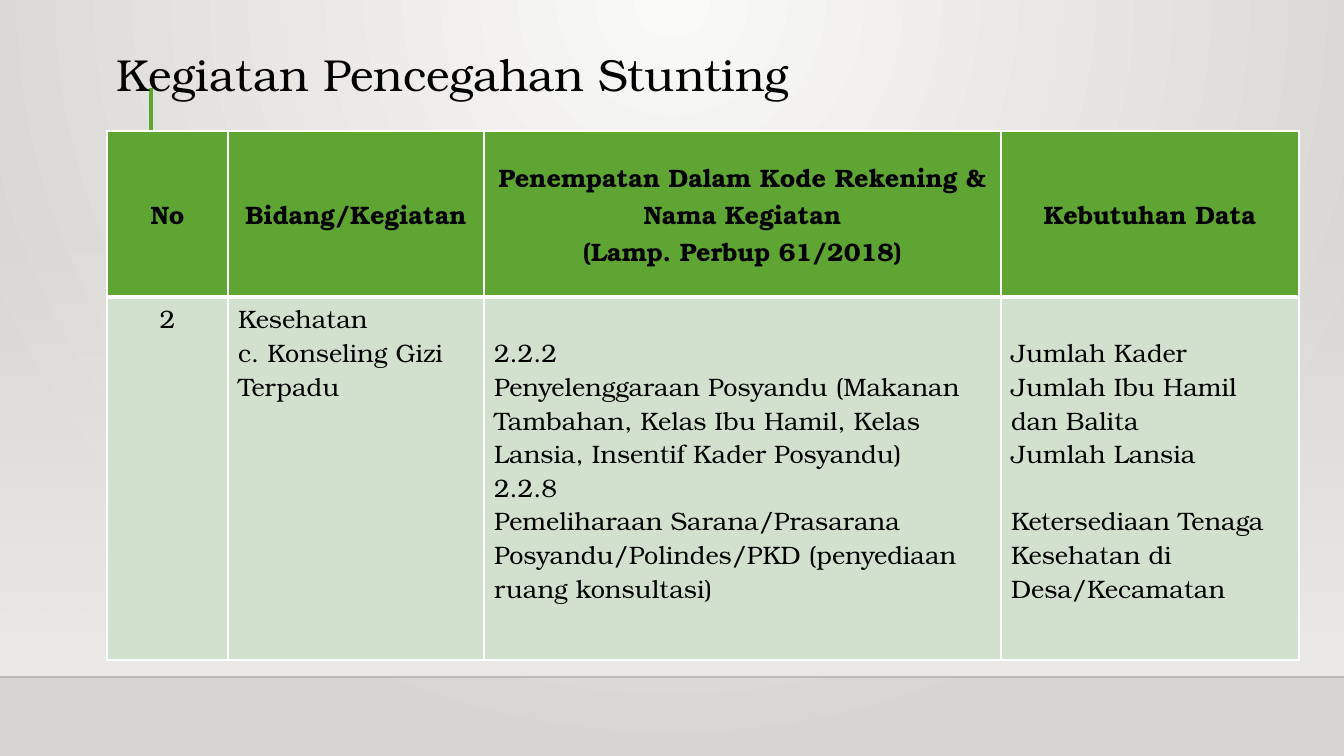
from dataclasses import dataclass

from pptx import Presentation
from pptx.dml.color import RGBColor
from pptx.enum.shapes import MSO_CONNECTOR as Connector, MSO_SHAPE as Shape
from pptx.enum.text import MSO_ANCHOR as Anchor, PP_ALIGN as Align
from pptx.oxml import parse_xml
from pptx.oxml.ns import nsdecls, qn
from pptx.util import Emu, Pt

EMU_PER_PX = 914400 / 100.8
FONT = "TeX Gyre Bonum"
BLACK = RGBColor(0x00, 0x00, 0x00)
WHITE = RGBColor(0xFF, 0xFF, 0xFF)
GREEN = RGBColor(0x5F, 0xA5, 0x34)
PALE_GREEN = RGBColor(0xD2, 0xE1, 0xCE)
NEAR_WHITE = RGBColor(0xFA, 0xFA, 0xF9)
GREY = RGBColor(0xD7, 0xD5, 0xD2)
WALL = RGBColor(0xED, 0xEB, 0xE7)
FLOOR_LINE = RGBColor(0x00, 0x00, 0x01)

COLUMN_WIDTHS = (121, 256, 517, 298)
ROW_HEIGHTS = (166, 363)
CELL_MARGIN = 5
LINE_HEIGHT = 34


@dataclass(frozen=True)
class CellText:
    lines: tuple[str, ...]
    align: Align = Align.LEFT
    lowered: bool = False
    gap_before: int | None = None


@dataclass(frozen=True)
class RowStyle:
    fill: RGBColor
    bold: bool
    anchor: Anchor
    borders: dict[str, int]


@dataclass(frozen=True)
class Rule:
    start: tuple[int, int]
    end: tuple[int, int]
    color: RGBColor
    width: int
    opacity: int = 100


RULES = (
    Rule((0, 677), (1344, 677), FLOOR_LINE, 1, 20),
    Rule((151, 88), (151, 206), GREEN, 3),
)

ROW_STYLES = (
    RowStyle(GREEN, True, Anchor.MIDDLE, {"lnL": 1, "lnR": 1, "lnT": 1, "lnB": 3}),
    RowStyle(PALE_GREEN, False, Anchor.TOP, {"lnL": 1, "lnR": 1, "lnT": 3, "lnB": 1}),
)

ROWS = (
    (
        CellText(("No",), Align.CENTER),
        CellText(("Bidang/Kegiatan",), Align.CENTER),
        CellText(("Penempatan Dalam Kode Rekening & Nama Kegiatan",
                  "(Lamp. Perbup 61/2018)"), Align.CENTER),
        CellText(("Kebutuhan Data",), Align.CENTER),
    ),
    (
        CellText(("2",), Align.CENTER),
        CellText(("Kesehatan", "c. Konseling Gizi Terpadu")),
        CellText((
            "2.2.2",
            "Penyelenggaraan Posyandu (Makanan Tambahan, Kelas Ibu Hamil, "
            "Kelas Lansia, Insentif Kader Posyandu)",
            "2.2.8",
            "Pemeliharaan Sarana/Prasarana Posyandu/Polindes/PKD "
            "(penyediaan ruang konsultasi)",
        ), lowered=True),
        CellText((
            "Jumlah Kader",
            "Jumlah Ibu Hamil dan Balita",
            "Jumlah Lansia",
            "Ketersediaan Tenaga Kesehatan di Desa/Kecamatan",
        ), lowered=True, gap_before=3),
    ),
)


def px(length: int) -> Emu:
    return Emu(round(length * EMU_PER_PX))


def set_gradient(parent, start: RGBColor, end: RGBColor, start_opacity: int, direction: str) -> None:
    """Replace the solid fill directly under parent with a two-stop gradient."""
    gradient = parse_xml(
        f'<a:gradFill {nsdecls("a")} rotWithShape="1"><a:gsLst>'
        f'<a:gs pos="0"><a:srgbClr val="{start}"><a:alpha val="{start_opacity * 1000}"/>'
        f'</a:srgbClr></a:gs><a:gs pos="100000"><a:srgbClr val="{end}"/></a:gs>'
        f'</a:gsLst>{direction}</a:gradFill>')
    parent.replace(parent.find(qn("a:solidFill")), gradient)


def paint_background(slide) -> None:
    slide.background.fill.solid()
    set_gradient(
        slide.element.find(".//" + qn("p:bgPr")), NEAR_WHITE, GREY, 100,
        '<a:path path="circle"><a:fillToRect l="43000" t="0" r="43000" b="100000"/></a:path>')


def add_wall(slide) -> None:
    wall = slide.shapes.add_shape(Shape.RECTANGLE, px(0), px(222), px(1344), px(454))
    wall.shadow.inherit = False
    wall.line.fill.background()
    wall.fill.solid()
    set_gradient(wall.element.spPr, WALL, WALL, 0, '<a:lin ang="5400000" scaled="0"/>')


def add_rule(slide, rule: Rule) -> None:
    line = slide.shapes.add_connector(
        Connector.STRAIGHT, *map(px, rule.start), *map(px, rule.end))
    line.line.color.rgb = rule.color
    line.line.width = Pt(rule.width)
    properties = line.element.spPr
    color = properties.find(".//" + qn("a:srgbClr"))
    color.append(parse_xml(f'<a:alpha {nsdecls("a")} val="{rule.opacity * 1000}"/>'))
    properties.append(parse_xml(f'<a:effectLst {nsdecls("a")}/>'))


def add_run(para, text: str, size: int, bold: bool = False) -> None:
    span = para.add_run()
    span.text = text
    span.font.name = FONT
    span.font.size = Pt(size)
    span.font.bold = bold
    span.font.color.rgb = BLACK


def add_title(slide, text: str) -> None:
    box = slide.shapes.add_textbox(px(107), px(45), px(1192), px(61))
    box.text_frame.word_wrap = True
    box.text_frame.vertical_anchor = Anchor.BOTTOM
    para = box.text_frame.paragraphs[0]
    para.line_spacing = 0.9
    add_run(para, text, 32)


def fill_cell(cell, content: CellText, style: RowStyle) -> None:
    properties = cell._tc.get_or_add_tcPr()
    for side, width in style.borders.items():
        properties.append(parse_xml(
            f'<a:{side} {nsdecls("a")} w="{Pt(width)}"><a:solidFill>'
            f'<a:srgbClr val="{WHITE}"/></a:solidFill></a:{side}>'))
    cell.fill.solid()
    cell.fill.fore_color.rgb = style.fill
    cell.vertical_anchor = style.anchor
    cell.margin_top = px(CELL_MARGIN + LINE_HEIGHT * content.lowered)
    frame = cell.text_frame
    for index, line in enumerate(content.lines):
        para = frame.add_paragraph() if index else frame.paragraphs[0]
        para.alignment = content.align
        if index == content.gap_before:
            para.space_before = Pt(24)
        add_run(para, line, 18, style.bold)


def add_activity_table(slide) -> None:
    table = slide.shapes.add_table(
        len(ROWS), len(COLUMN_WIDTHS), px(107), px(131),
        px(sum(COLUMN_WIDTHS)), px(sum(ROW_HEIGHTS))).table
    table.first_row = table.horz_banding = False
    for column, width in zip(table.columns, COLUMN_WIDTHS):
        column.width = px(width)
    for row, height, contents, style in zip(table.rows, ROW_HEIGHTS, ROWS, ROW_STYLES):
        row.height = px(height)
        for cell, content in zip(row.cells, contents):
            fill_cell(cell, content, style)


def main() -> None:
    deck = Presentation()
    deck.slide_width, deck.slide_height = px(1344), px(756)
    page = deck.slides.add_slide(deck.slide_layouts[6])
    paint_background(page)
    add_wall(page)
    for rule in RULES:
        add_rule(page, rule)
    add_title(page, "Kegiatan Pencegahan Stunting")
    add_activity_table(page)
    deck.save("out.pptx")


if __name__ == "__main__":
    main()
